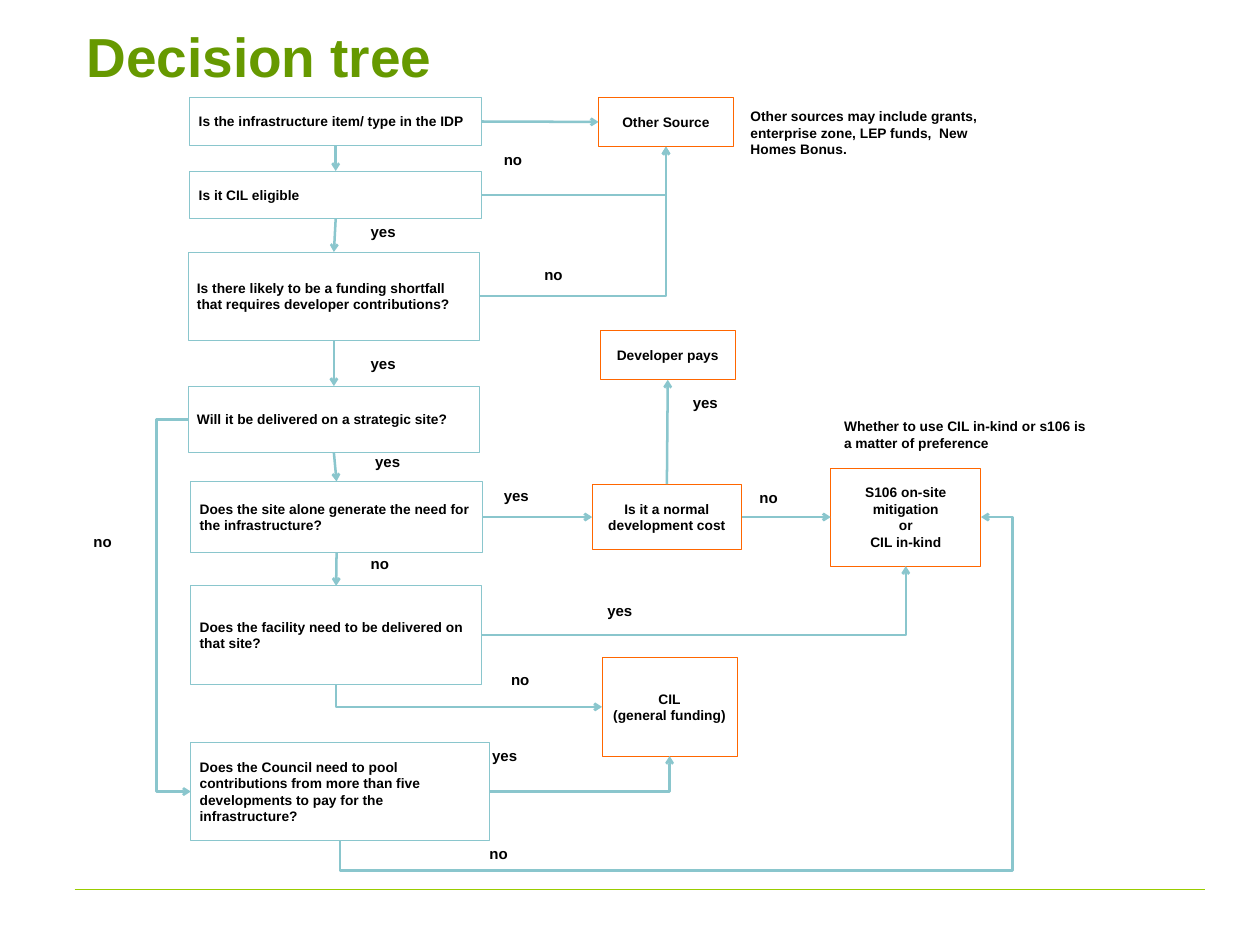
from lxml import etree
from pptx import Presentation
from pptx.dml.color import RGBColor
from pptx.enum.shapes import MSO_CONNECTOR, MSO_SHAPE
from pptx.enum.text import MSO_ANCHOR, PP_ALIGN
from pptx.oxml.ns import qn
from pptx.util import Inches, Pt

TITLE_GREEN = RGBColor(0x66, 0x99, 0x00)
RULE_GREEN = RGBColor(0x99, 0xCC, 0x00)
TEAL = RGBColor(0x8A, 0xC6, 0xCD)
ORANGE = RGBColor(0xFF, 0x66, 0x00)
BLACK = RGBColor(0, 0, 0)
LEFT, CENTER = PP_ALIGN.LEFT, PP_ALIGN.CENTER
TOP, MIDDLE = MSO_ANCHOR.TOP, MSO_ANCHOR.MIDDLE
RECTANGLE = MSO_SHAPE.RECTANGLE
STRAIGHT, ELBOW = MSO_CONNECTOR.STRAIGHT, MSO_CONNECTOR.ELBOW
# Connection sites of a rectangle
UP, WEST, DOWN, EAST = range(4)


def write_text(holder, text, size=11, color=BLACK, align=LEFT, anchor=MIDDLE):
    frame = holder.text_frame
    frame.word_wrap = True
    frame.vertical_anchor = anchor
    frame.text = text
    for paragraph in frame.paragraphs:
        paragraph.alignment = align
        font = paragraph.font
        font.name, font.size, font.bold = "Arial", Pt(size), True
        font.color.rgb = color


def style_line(connector, color, width, arrow=None):
    """Format a connector; arrow is None, "headEnd" or "tailEnd"."""
    connector.line.color.rgb = color
    connector.line.width = Pt(width)
    properties = connector._element.spPr
    if arrow:
        etree.SubElement(properties.find(qn("a:ln")), qn("a:" + arrow), type="arrow")
    etree.SubElement(properties, qn("a:effectLst"))


prs = Presentation()
prs.slide_width, prs.slide_height = Inches(14), Inches(10.5)
slide = prs.slides.add_slide(prs.slide_layouts[5])
shapes = slide.shapes

footer_rule = shapes.add_connector(
    STRAIGHT, Inches(0.83), Inches(9.88), Inches(13.39), Inches(9.88))
style_line(footer_rule, RULE_GREEN, 0.75)

title = shapes.title
title.left, title.top = Inches(0.83), Inches(-0.26)
title.width, title.height = Inches(12.6), Inches(1.75)
write_text(title, "Decision tree", size=44, color=TITLE_GREEN)
title.text_frame.margin_left = title.text_frame.margin_right = Inches(0.13)

# Questions are teal and left-aligned, outcomes orange and centred
questions = {
    "in_idp": (2.11, 1.08, 3.24, 0.54, "Is the infrastructure item/ type in the IDP"),
    "eligible": (2.11, 1.9, 3.24, 0.53, "Is it CIL eligible"),
    "shortfall": (2.09, 2.8, 3.24, 0.98,
                  "Is there likely to be a funding shortfall that requires developer contributions?"),
    "strategic": (2.09, 4.29, 3.24, 0.74, "Will it be delivered on a strategic site?"),
    "site_need": (2.12, 5.35, 3.24, 0.79,
                  "Does the site alone generate the need for the infrastructure?"),
    "on_site": (2.12, 6.51, 3.23, 1.09, "Does the facility need to be delivered on that site?"),
    "pooling": (2.12, 8.25, 3.32, 1.09,
                "Does the Council need to pool contributions from more than five "
                "developments to pay for the infrastructure?"),
}
outcomes = {
    "other": (6.65, 1.08, 1.5, 0.55, "Other Source"),
    "developer": (6.67, 3.67, 1.5, 0.55, "Developer pays"),
    "normal_cost": (6.58, 5.38, 1.66, 0.73, "Is it a normal development cost"),
    "mitigation": (9.23, 5.2, 1.67, 1.09, "S106 on-site mitigation\nor\nCIL in-kind"),
    "cil": (6.69, 7.31, 1.5, 1.09, "CIL\n(general funding)"),
}
boxes = {}
for group, color, align in ((questions, TEAL, LEFT), (outcomes, ORANGE, CENTER)):
    for key, (x, y, w, h, text) in group.items():
        box = shapes.add_shape(RECTANGLE, Inches(x), Inches(y), Inches(w), Inches(h))
        box.shadow.inherit = False
        box.fill.background()
        box.line.color.rgb = color
        box.line.width = Pt(0.75)
        write_text(box, text, align=align)
        boxes[key] = box

straight_arrows = [
    ("in_idp", DOWN, "eligible", UP),
    ("eligible", DOWN, "shortfall", UP),
    ("shortfall", DOWN, "strategic", UP),
    ("strategic", DOWN, "site_need", UP),
    ("site_need", DOWN, "on_site", UP),
    ("in_idp", EAST, "other", WEST),
    ("site_need", EAST, "normal_cost", WEST),
    ("normal_cost", EAST, "mitigation", WEST),
    ("normal_cost", UP, "developer", DOWN),
]
for source, source_side, target, target_side in straight_arrows:
    arrow = shapes.add_connector(STRAIGHT, 0, 0, 0, 0)
    arrow.begin_connect(boxes[source], source_side)
    arrow.end_connect(boxes[target], target_side)
    style_line(arrow, TEAL, 2, "tailEnd")

# Every bent arrow leaves its first box sideways, so the two that answer a
# question from below run backwards and carry their arrowhead at the start.
# The last two fields are the x and y (inches) of the bends outside the ends.
bent_arrows = [
    ("eligible", EAST, "other", DOWN, "tailEnd", "bentConnector2", None, None),
    ("shortfall", EAST, "other", DOWN, "tailEnd", "bentConnector2", None, None),
    ("on_site", EAST, "mitigation", DOWN, "tailEnd", "bentConnector2", None, None),
    ("pooling", EAST, "cil", DOWN, "tailEnd", "bentConnector2", None, None),
    ("cil", WEST, "on_site", DOWN, "headEnd", "bentConnector2", None, None),
    ("strategic", WEST, "pooling", WEST, "tailEnd", "bentConnector3", 1.74, None),
    ("mitigation", EAST, "pooling", DOWN, "headEnd", "bentConnector4", 11.25, 9.67),
]
for first, first_side, last, last_side, head, preset, bend_x, bend_y in bent_arrows:
    arrow = shapes.add_connector(ELBOW, 0, 0, 0, 0)
    arrow.begin_connect(boxes[first], first_side)
    arrow.end_connect(boxes[last], last_side)
    style_line(arrow, TEAL, 2, head)
    geometry = arrow._element.spPr.find(qn("a:prstGeom"))
    geometry.set("prst", preset)
    guides = geometry.find(qn("a:avLst"))
    bends = ((bend_x, arrow.begin_x, arrow.end_x), (bend_y, arrow.begin_y, arrow.end_y))
    for number, (bend, start, end) in enumerate(bends, 1):
        if bend is not None:
            share = round((Inches(bend) - start) / (end - start) * 100000)
            etree.SubElement(guides, qn("a:gd"), name=f"adj{number}", fmla=f"val {share}")

answers = [
    ("no", 5.5, 1.62), ("yes", 4.02, 2.42), ("no", 5.95, 2.9), ("yes", 4.02, 3.89),
    ("yes", 7.6, 4.32), ("yes", 4.07, 4.98), ("yes", 5.5, 5.36), ("no", 8.34, 5.38),
    ("no", 0.94, 5.87), ("no", 4.02, 6.11), ("yes", 6.65, 6.64), ("no", 5.58, 7.4),
    ("yes", 5.37, 8.25), ("no", 5.34, 9.34),
]
for answer, x, y in answers:
    label = shapes.add_textbox(Inches(x), Inches(y), Inches(0.74), Inches(0.4))
    write_text(label, answer, size=12, anchor=TOP)

remarks = [
    (8.24, 1.08, "Other sources may include grants, enterprise zone, LEP funds,  New Homes Bonus."),
    (9.28, 4.43, "Whether to use CIL in-kind or s106 is a matter of preference"),
]
for x, y, text in remarks:
    remark = shapes.add_textbox(Inches(x), Inches(y), Inches(3), Inches(0.79))
    write_text(remark, text)

prs.save("out.pptx")
